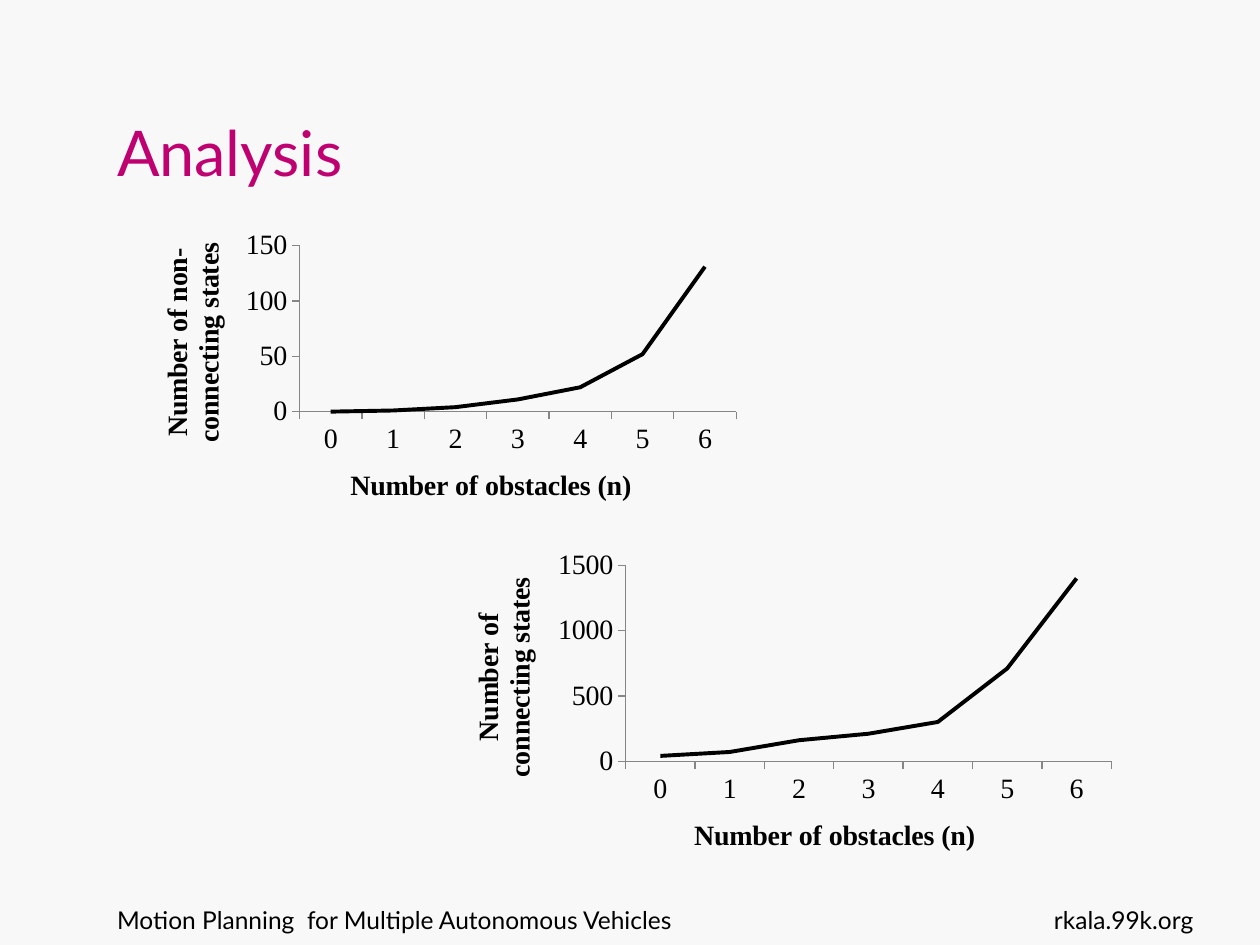
from dataclasses import dataclass

from lxml import etree
from pptx import Presentation
from pptx.chart.data import CategoryChartData
from pptx.dml.color import RGBColor
from pptx.enum.chart import XL_CHART_TYPE, XL_MARKER_STYLE, XL_TICK_MARK
from pptx.enum.text import MSO_ANCHOR, PP_ALIGN
from pptx.oxml.ns import qn
from pptx.util import Cm, Pt


@dataclass(frozen=True)
class Theme:
    background: RGBColor = RGBColor(0xF8, 0xF8, 0xF8)
    ink: RGBColor = RGBColor(0, 0, 0)
    accent: RGBColor = RGBColor(0xBF, 0x00, 0x71)
    axis: RGBColor = RGBColor(0x86, 0x86, 0x86)
    text_font: str = "Lato"
    chart_font: str = "Times New Roman"
    title_size: int = 36
    footer_size: int = 14
    chart_size: int = 16
    series_width: float = 2.25
    axis_width: float = 0.75


class SlideBuilder:
    def __init__(self, slide, theme):
        self.slide = slide
        self.theme = theme
        slide.background.fill.solid()
        slide.background.fill.fore_color.rgb = theme.background

    def style_font(self, font, name, size, color, bold=False):
        font.name = name
        font.size = Pt(size)
        font.bold = bold
        font.color.rgb = color

    def text(self, box, wording, size, color, align=PP_ALIGN.LEFT,
             anchor=MSO_ANCHOR.TOP, wrap=True):
        shape = self.slide.shapes.add_textbox(*map(Cm, box))
        frame = shape.text_frame
        frame.word_wrap = wrap
        frame.vertical_anchor = anchor
        paragraph = frame.paragraphs[0]
        paragraph.alignment = align
        run = paragraph.add_run()
        run.text = wording
        self.style_font(run.font, self.theme.text_font, size, color)

    def line_chart(self, box, plot, value_title, values, step):
        theme = self.theme
        data = CategoryChartData()
        data.categories = [str(count) for count in range(len(values))]
        data.add_series("Series 1", values)
        chart = self.slide.shapes.add_chart(
            XL_CHART_TYPE.LINE, *map(Cm, box), data).chart
        chart.has_legend = False
        chart.has_title = False
        self.style_font(chart.font, theme.chart_font, theme.chart_size, theme.ink)
        chart.plots[0].vary_by_categories = False

        series = chart.plots[0].series[0]
        series.smooth = False
        series.marker.style = XL_MARKER_STYLE.NONE
        series.format.line.color.rgb = theme.ink
        series.format.line.width = Pt(theme.series_width)

        self.axis(chart.category_axis, "Number of obstacles (n)")
        self.axis(chart.value_axis, value_title)
        chart.value_axis.minimum_scale = 0
        chart.value_axis.maximum_scale = 3 * step
        chart.value_axis.major_unit = step
        self.place_plot(chart, plot)

    def axis(self, axis, title):
        theme = self.theme
        axis.has_major_gridlines = False
        axis.major_tick_mark = XL_TICK_MARK.OUTSIDE
        axis.minor_tick_mark = XL_TICK_MARK.NONE
        axis.format.line.color.rgb = theme.axis
        axis.format.line.width = Pt(theme.axis_width)
        run = axis.axis_title.text_frame.paragraphs[0].add_run()
        run.text = title
        self.style_font(run.font, theme.chart_font, theme.chart_size,
                        theme.ink, bold=True)

    def place_plot(self, chart, plot):
        """Fix the inner plot area, given as fractions of the chart frame."""
        plot_area = chart.plots[0]._element.getparent()
        for old in plot_area.findall(qn("c:layout")):
            plot_area.remove(old)
        layout = etree.Element(qn("c:layout"))
        manual = etree.SubElement(layout, qn("c:manualLayout"))
        settings = [("layoutTarget", "inner"), ("xMode", "edge"), ("yMode", "edge")]
        settings += zip("xywh", map(str, plot))
        for tag, value in settings:
            etree.SubElement(manual, qn(f"c:{tag}")).set("val", value)
        plot_area.insert(0, layout)


def main():
    theme = Theme()
    presentation = Presentation()
    presentation.slide_width = Cm(25.4)
    presentation.slide_height = Cm(19.05)
    slide = presentation.slides.add_slide(presentation.slide_layouts[6])
    builder = SlideBuilder(slide, theme)

    builder.text((2.11, 18.11, 17.6, 1.32),
                 "Motion Planning  for Multiple Autonomous Vehicles",
                 theme.footer_size, theme.ink)
    builder.text((2.11, 0.76, 17.2, 3.18), "Analysis", theme.title_size,
                 theme.accent, anchor=MSO_ANCHOR.BOTTOM, wrap=False)
    builder.text((20.5, 18.11, 3.81, 1.32), "rkala.99k.org",
                 theme.footer_size, theme.ink, align=PP_ALIGN.RIGHT)

    builder.line_chart((2.69, 4.52, 12.4, 6.2), (0.27, 0.07, 0.71, 0.54),
                       "Number of non-connecting states",
                       (0, 1, 4, 11, 22, 52, 131), step=50)
    builder.line_chart((8.89, 10.92, 13.79, 6.81), (0.27, 0.07, 0.71, 0.58),
                       "Number of connecting states",
                       (40, 70, 160, 210, 300, 710, 1400), step=500)
    presentation.save("out.pptx")


if __name__ == "__main__":
    main()
